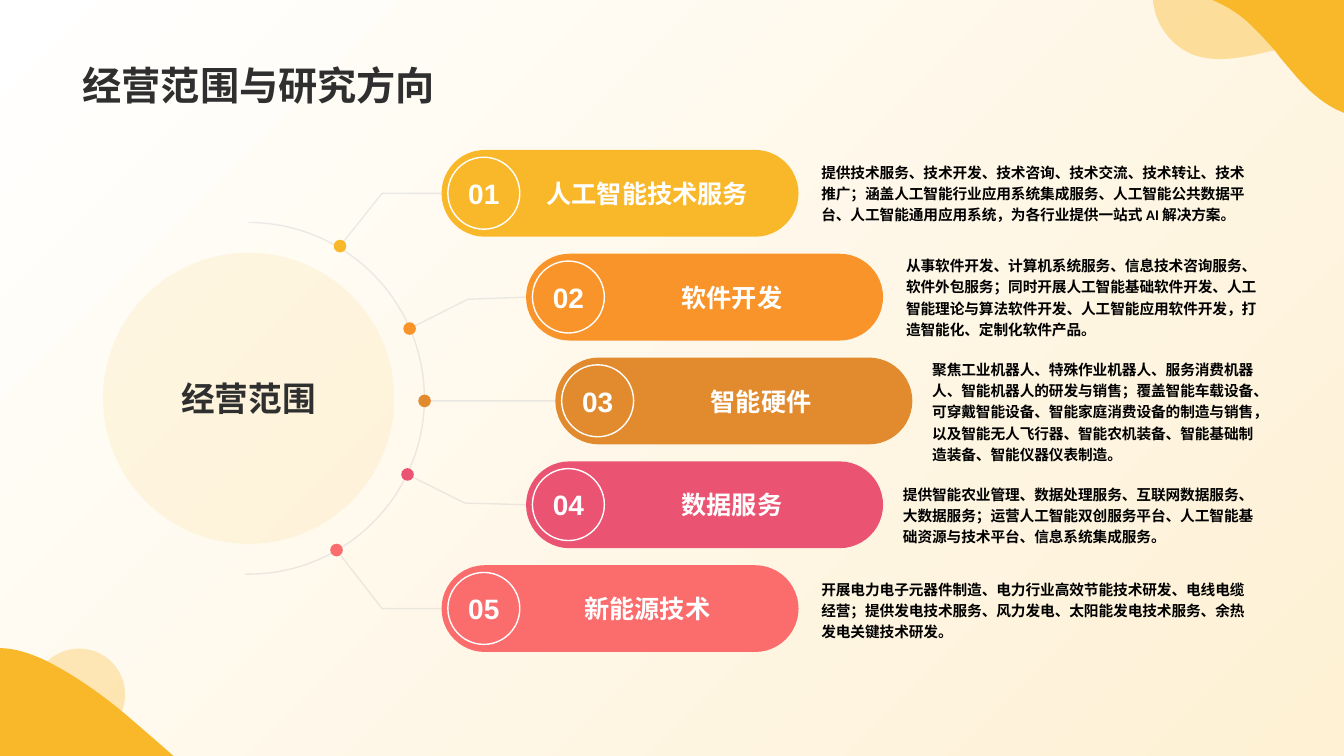
from lxml import etree
from pptx import Presentation
from pptx.dml.color import RGBColor
from pptx.enum.lang import MSO_LANGUAGE_ID
from pptx.enum.shapes import MSO_CONNECTOR, MSO_SHAPE
from pptx.enum.text import MSO_ANCHOR, MSO_AUTO_SIZE, PP_ALIGN
from pptx.oxml.ns import qn
from pptx.util import Pt

OVAL, ARC, PILL = MSO_SHAPE.OVAL, MSO_SHAPE.ARC, MSO_SHAPE.ROUNDED_RECTANGLE
STRAIGHT = MSO_CONNECTOR.STRAIGHT
LEFT, CENTER = PP_ALIGN.LEFT, PP_ALIGN.CENTER
MIDDLE, BOTTOM = MSO_ANCHOR.MIDDLE, MSO_ANCHOR.BOTTOM
NO_FIT = MSO_AUTO_SIZE.NONE
CHINESE = MSO_LANGUAGE_ID.SIMPLIFIED_CHINESE
LEFT_SIDE = 1

COLORS = {
    "gold": "F9B82A", "orange": "F9942A", "brown": "E28A2E", "pink": "EA5371",
    "coral": "FB6C6C", "cream": "FEF1D4", "white": "FFFFFF", "ink": "2F2F2F",
    "black": "000000", "gray": "778495",
}
CJK = "Noto Sans CJK SC"
FONTS = {
    "title": ({"name": CJK, "size": Pt(28)}, "ink"),
    "hub": ({"name": CJK, "size": Pt(24)}, "ink"),
    "badge": ({"name": "Arial", "size": Pt(20)}, "white"),
    "label": ({"name": CJK, "size": Pt(18)}, "white"),
    "note": ({"name": "Calibri", "size": Pt(10.5)}, "black"),
}
TOP, STEP = 107.1, 74.15
PILL_W, PILL_H, DOT = 255, 62, 9

ROWS = [
    ("人工智能技术服务", "gold", 315.4, (242.9, 175.8), (272.9, 138.1), (579.6, 106.1, 326.5),
     "提供技术服务、技术开发、技术咨询、技术交流、技术转让、技术推广；涵盖人工智能行业应用系统集成服务、人工智能公共数据平台、人工智能通用应用系统，为各行业提供一站式 AI 解决方案。"),
    ("软件开发", "orange", 375.8, (292.6, 234.7), (334.1, 213.8), (640.1, 180.3, 267.1),
     "从事软件开发、计算机系统服务、信息技术咨询服务、软件外包服务；同时开展人工智能基础软件开发、人工智能理论与算法软件开发、人工智能应用软件开发，打造智能化、定制化软件产品。"),
    ("智能硬件", "brown", 396.7, (303.3, 286.4), None, (658.8, 262.1, 246.2),
     "聚焦工业机器人、特殊作业机器人、服务消费机器人、智能机器人的研发与销售；覆盖智能车载设备、可穿戴智能设备、智能家庭消费设备的制造与销售，以及智能无人飞行器、智能农机装备、智能基础制造装备、智能仪器仪表制造。"),
    ("数据服务", "pink", 375.8, (291.1, 338.9), (331.9, 359.3), (637.9, 336.2, 267.1),
     "提供智能农业管理、数据处理服务、互联网数据服务、大数据服务；运营人工智能双创服务平台、人工智能基础资源与技术平台、信息系统集成服务。"),
    ("新能源技术", "coral", 315.4, (240.4, 392.9), (272.9, 434.7), (579.6, 403.9, 326.5),
     "开展电力电子元器件制造、电力行业高效节能技术研发、电线电缆经营；提供发电技术服务、风力发电、太阳能发电技术服务、余热发电关键技术研发。"),
]

BLOBS = [
    ((0, 463), "gold", 100, (124, 77),
     [(116.6, 70.5, 105.8, 61.2, 95, 51.8), (78.5, 37.4, 59.8, 23.7, 41.8, 13.7),
      (26.6, 5, 12.2, 0, 0, 0)], (0, 77)),
    ((866, 0), "gold", 100, (0, 0),
     [(8.6, 3.6, 17.3, 8.6, 24.5, 15.1), (31.7, 21.6, 38.2, 28.8, 44.6, 36),
      (48.2, 41, 52.6, 46.1, 56.9, 51.1), (67, 63.4, 79.2, 74.9, 94, 80.6)], (94, 0)),
    ((823.7, 0), "gold", 40, (0, 0),
     [(0, 1.4, 0, 3.6, 0.7, 5), (3.6, 21.6, 16.6, 36, 32.4, 40.3),
      (46.1, 43.9, 59.8, 41.8, 73.4, 38.9), (77.8, 38.2, 82.1, 36.7, 87.1, 36),
      (103, 32.4, 119.5, 28.8, 136.3, 25.9)], (136.3, 0)),
]


def rgb(name):
    """Return the named colour."""
    return RGBColor.from_string(COLORS[name])


def fade(shape, alpha):
    """Set the opacity of a shape's colours, in percent."""
    for tint in shape.element.spPr.iter(qn("a:srgbClr")):
        etree.SubElement(tint, qn("a:alpha"), val=str(alpha * 1000))


def write(shape, text, style, align=CENTER, anchor=MIDDLE, wrap=True, space=None):
    """Write one styled paragraph into a shape."""
    frame = shape.text_frame
    frame.auto_size, frame.word_wrap, frame.vertical_anchor = NO_FIT, wrap, anchor
    para = frame.paragraphs[0]
    para.alignment, para.line_spacing = align, space
    run = para.add_run()
    run.text = text
    values, color = FONTS[style]
    for key, value in {**values, "bold": True, "language_id": CHINESE}.items():
        setattr(run.font, key, value)
    run.font.color.rgb = rgb(color)
    etree.SubElement(run.font._element, qn("a:ea"), typeface=CJK)


def paint(shape, fill=None, line=None):
    """Give a shape a plain fill and line without shadow."""
    shape.shadow.inherit = False
    if fill:
        shape.fill.solid()
        shape.fill.fore_color.rgb = rgb(fill)
    else:
        shape.fill.background()
    if line:
        shape.line.color.rgb = rgb(line)
        shape.line.width = Pt(1)
    else:
        shape.line.fill.background()


def form(slide, kind, box, fill=None, line=None):
    """Add a painted preset shape."""
    shape = slide.shapes.add_shape(kind, *map(Pt, box))
    paint(shape, fill, line)
    return shape


def label(slide, box, text, style, **layout):
    """Add a text box."""
    write(slide.shapes.add_textbox(*map(Pt, box)), text, style, **layout)


def link(slide, start, end, pill=None):
    """Draw a faint line, joined to a pill's left side if one is given."""
    line = slide.shapes.add_connector(STRAIGHT, *map(Pt, start + end))
    if pill is not None:
        line.end_connect(pill, LEFT_SIDE)
    line.line.color.rgb = rgb("gray")
    line.line.width = Pt(1)
    etree.SubElement(line.element.spPr, qn("a:effectLst"))
    fade(line, 15)


def bend_side(side, curve):
    """Turn a straight outline segment into a cubic curve."""
    cubic = etree.Element(qn("a:cubicBezTo"))
    for x, y in zip(curve[::2], curve[1::2]):
        etree.SubElement(cubic, qn("a:pt"), x=str(Pt(x)), y=str(Pt(y)))
    side.getparent().replace(side, cubic)


def blob(slide, spot, fill, alpha, start, curves, corner):
    """Draw a curved corner patch from its top left spot."""
    nodes = [(Pt(spot[0] + x), Pt(spot[1] + y))
             for x, y in [start, *(curve[4:] for curve in curves), corner]]
    pen = slide.shapes.build_freeform(*nodes[0])
    pen.add_line_segments(nodes[1:], close=True)
    shape = pen.convert_to_shape()
    sides = list(shape.element.spPr.iter(qn("a:lnTo")))
    for side, curve in zip(sides, curves):
        bend_side(side, curve)
    paint(shape, fill)
    if alpha < 100:
        fade(shape, alpha)


def decor(slide):
    """Fill the background and decorate the corners."""
    fill = slide.background.fill
    fill.gradient()
    fill.gradient_angle = 135
    for stop, name in zip(fill.gradient_stops, ("cream", "white")):
        stop.color.rgb = rgb(name)
    fade(form(slide, OVAL, (23.8, 463.3, 65.5, 65.5), "gold"), 30)
    for patch in BLOBS:
        blob(slide, *patch)


def head(slide, box, text):
    """Place the slide title."""
    title = slide.shapes.title
    title.left, title.top, title.width, title.height = map(Pt, box)
    write(title, text, "title", align=LEFT, anchor=BOTTOM)


def hub(slide, box, text):
    """Place the central disc inside its arc."""
    x, y, size = box
    gap = 21.6
    disc = form(slide, OVAL, (x + gap, y + gap, size - 2 * gap, size - 2 * gap), "gold")
    fade(disc, 10)
    write(disc, text, "hub")
    arc = form(slide, ARC, (x, y, size, size), line="gray")
    arc.adjustments[0], arc.adjustments[1] = 162, 54.6
    fade(arc, 15)


def branch(slide, box, number, text, color, dot, bend):
    """Place a numbered pill and its line to the arc."""
    x, y, w, h = box
    pill = form(slide, PILL, box, color)
    pill.adjustments[0] = 0.5
    if bend:
        link(slide, dot, bend)
    link(slide, bend or dot, (x, y + h / 2), pill)
    form(slide, OVAL, (dot[0] - DOT / 2, dot[1] - DOT / 2, DOT, DOT), color)
    badge = form(slide, OVAL, (x + 4.5, y + 5.2, 51.4, 51.4), line="white")
    write(badge, f"{number:02}", "badge", wrap=False)
    label(slide, (x + 60.6, y + 0.8, 172.8, h - 1.6), text, "label")


def main():
    """Build and save the slide."""
    deck = Presentation()
    deck.slide_width, deck.slide_height = Pt(960), Pt(540)
    slide = deck.slides.add_slide(deck.slide_layouts[5])
    decor(slide)
    head(slide, (51.8, 10.4, 855.4, 70.6), "经营范围与研究方向")
    hub(slide, (52, 158.9, 251.2), "经营范围")
    for i, (text, color, x, dot, bend, spot, note) in enumerate(ROWS):
        box = (x, TOP + i * STEP, PILL_W, PILL_H)
        branch(slide, box, i + 1, text, color, dot, bend)
        label(slide, (*spot, PILL_H), note, "note", align=LEFT, space=1.2)
    deck.save("out.pptx")


if __name__ == "__main__":
    main()
